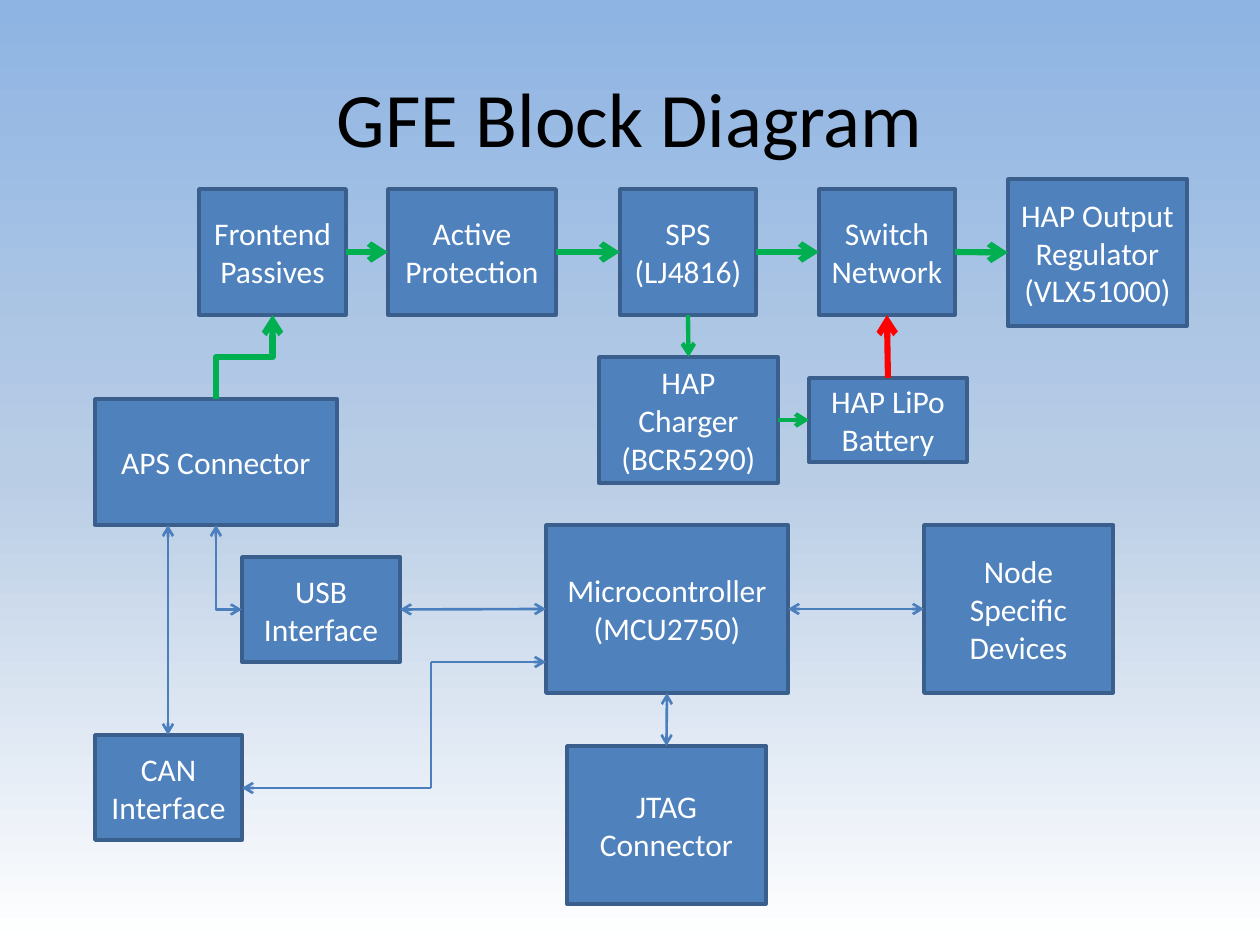
from copy import deepcopy

from lxml.etree import SubElement
from pptx import Presentation
from pptx.dml.color import RGBColor
from pptx.enum.shapes import MSO_CONNECTOR, MSO_SHAPE
from pptx.enum.text import MSO_ANCHOR, PP_ALIGN
from pptx.oxml.ns import qn
from pptx.util import Pt

EMU_PER_PX = 914400 / 126
COLORS = {
    "sky": "8EB4E3",
    "haze": "B9CDE5",
    "white": "FFFFFF",
    "title": "000000",
    "block": "4F81BD",
    "border": "3A5F8C",
    "supply": "00B050",
    "battery": "FF0000",
    "data": "4B7EBC",
}
TOP, LEFT, BOTTOM, RIGHT = range(4)

BLOCKS = {
    "aps": ("APS Connector", 95, 399, 242, 126),
    "frontend": ("Frontend Passives", 199, 189, 147, 126),
    "protection": ("Active Protection", 388, 189, 168, 126),
    "sps": ("SPS (LJ4816)", 620, 189, 136, 126),
    "switch": ("Switch Network", 819, 189, 136, 126),
    "regulator": ("HAP Output Regulator (VLX51000)", 1008, 179, 179, 147),
    "charger": ("HAP Charger (BCR5290)", 599, 357, 179, 126),
    "lipo": ("HAP LiPo Battery", 809, 378, 158, 84),
    "usb": ("USB Interface", 242, 557, 158, 105),
    "can": ("CAN Interface", 95, 735, 147, 105),
    "jtag": ("JTAG Connector", 567, 746, 199, 158),
    "micro": ("Microcontroller\n(MCU2750)", 546, 525, 242, 168),
    "devices": ("Node Specific Devices", 924, 525, 189, 168),
}
SUPPLY_LINKS = [
    ("frontend", RIGHT, "protection", LEFT, "supply", 3.5),
    ("protection", RIGHT, "sps", LEFT, "supply", 3.5),
    ("sps", RIGHT, "switch", LEFT, "supply", 3.5),
    ("switch", RIGHT, "regulator", LEFT, "supply", 3.5),
    ("sps", BOTTOM, "charger", TOP, "supply", 2.5),
    ("charger", RIGHT, "lipo", LEFT, "supply", 2.5),
    ("lipo", TOP, "switch", BOTTOM, "battery", 3.5),
]
DATA_LINKS = [
    ("micro", RIGHT, "devices", LEFT),
    ("usb", RIGHT, "micro", LEFT),
    ("jtag", TOP, "micro", BOTTOM),
]
DATA_LINES = [
    ((168, 525), (168, 735), True, True),
    ((431, 788), (242, 788), False, True),
    ((431, 788), (431, 662), False, False),
    ((431, 662), (546, 662), False, True),
]


def px(length):
    return round(length * EMU_PER_PX)


def rgb(name):
    return RGBColor.from_string(COLORS[name])


def write(frame, text, size=18, color="white"):
    frame.text = text
    frame.word_wrap = True
    frame.vertical_anchor = MSO_ANCHOR.MIDDLE
    for paragraph in frame.paragraphs:
        paragraph.alignment = PP_ALIGN.CENTER
        font = paragraph.runs[0].font
        font.name = "Calibri"
        font.size = Pt(size)
        font.color.rgb = rgb(color)


def paint_background(slide):
    fill = slide.background.fill
    fill.gradient()
    fill.gradient_angle = 270
    stops = slide.element.xpath(".//p:bg//a:gsLst")[0]
    stops.append(deepcopy(stops[-1]))
    for stop, color, position in zip(fill.gradient_stops, ("sky", "haze", "white"), (0, 0.5, 1)):
        stop.color.rgb = rgb(color)
        stop.position = position


def set_title(slide, text):
    title = slide.shapes.title
    title.left, title.top, title.width, title.height = map(px, (63, 38, 1134, 158))
    write(title.text_frame, text, size=44, color="title")


def add_block(slide, text, *box):
    block = slide.shapes.add_shape(MSO_SHAPE.RECTANGLE, *map(px, box))
    block.shadow.inherit = False
    block.fill.solid()
    block.fill.fore_color.rgb = rgb("block")
    block.line.color.rgb = rgb("border")
    block.line.width = Pt(2)
    write(block.text_frame, text)
    return block


def add_line(slide, start=(0, 0), end=(0, 0), color="data", weight=1.5,
             head=False, tail=True, kind=MSO_CONNECTOR.STRAIGHT):
    line = slide.shapes.add_connector(kind, *map(px, start + end))
    line.line.color.rgb = rgb(color)
    line.line.width = Pt(weight)
    stroke = line.line._get_or_add_ln()
    for tag, wanted in (("a:headEnd", head), ("a:tailEnd", tail)):
        if wanted:
            SubElement(stroke, qn(tag), type="arrow")
    SubElement(line.element.spPr, qn("a:effectLst"))
    return line


def link(slide, source, source_side, target, target_side, **style):
    line = add_line(slide, **style)
    line.begin_connect(source, source_side)
    line.end_connect(target, target_side)
    return line


def turn_elbow(elbow, preset, degrees):
    center_x = (elbow.begin_x + elbow.end_x) // 2
    center_y = (elbow.begin_y + elbow.end_y) // 2
    direction = 1 if degrees == 90 else -1
    shift_x = direction * (elbow.begin_y - center_y)
    shift_y = -direction * (elbow.begin_x - center_x)
    elbow.begin_x, elbow.begin_y = center_x + shift_x, center_y + shift_y
    elbow.end_x, elbow.end_y = center_x - shift_x, center_y - shift_y
    properties = elbow.element.spPr
    properties.find(qn("a:xfrm")).set("rot", str(degrees * 60000))
    properties.find(qn("a:prstGeom")).set("prst", preset)


def main():
    presentation = Presentation()
    presentation.slide_width, presentation.slide_height = px(1260), px(945)
    slide = presentation.slides.add_slide(presentation.slide_layouts[5])
    paint_background(slide)
    set_title(slide, "GFE Block Diagram")
    blocks = {name: add_block(slide, *details) for name, details in BLOCKS.items()}

    for source, source_side, target, target_side, color, weight in SUPPLY_LINKS:
        link(slide, blocks[source], source_side, blocks[target], target_side,
             color=color, weight=weight)
    for source, source_side, target, target_side in DATA_LINKS:
        link(slide, blocks[source], source_side, blocks[target], target_side, head=True)
    for start, end, head, tail in DATA_LINES:
        add_line(slide, start, end, head=head, tail=tail)

    supply_elbow = link(slide, blocks["aps"], TOP, blocks["frontend"], BOTTOM,
                        color="supply", weight=3.5, kind=MSO_CONNECTOR.ELBOW)
    turn_elbow(supply_elbow, "bentConnector3", 90)
    usb_elbow = link(slide, blocks["aps"], BOTTOM, blocks["usb"], LEFT,
                     head=True, kind=MSO_CONNECTOR.ELBOW)
    turn_elbow(usb_elbow, "bentConnector2", 270)
    presentation.save("out.pptx")


if __name__ == "__main__":
    main()
